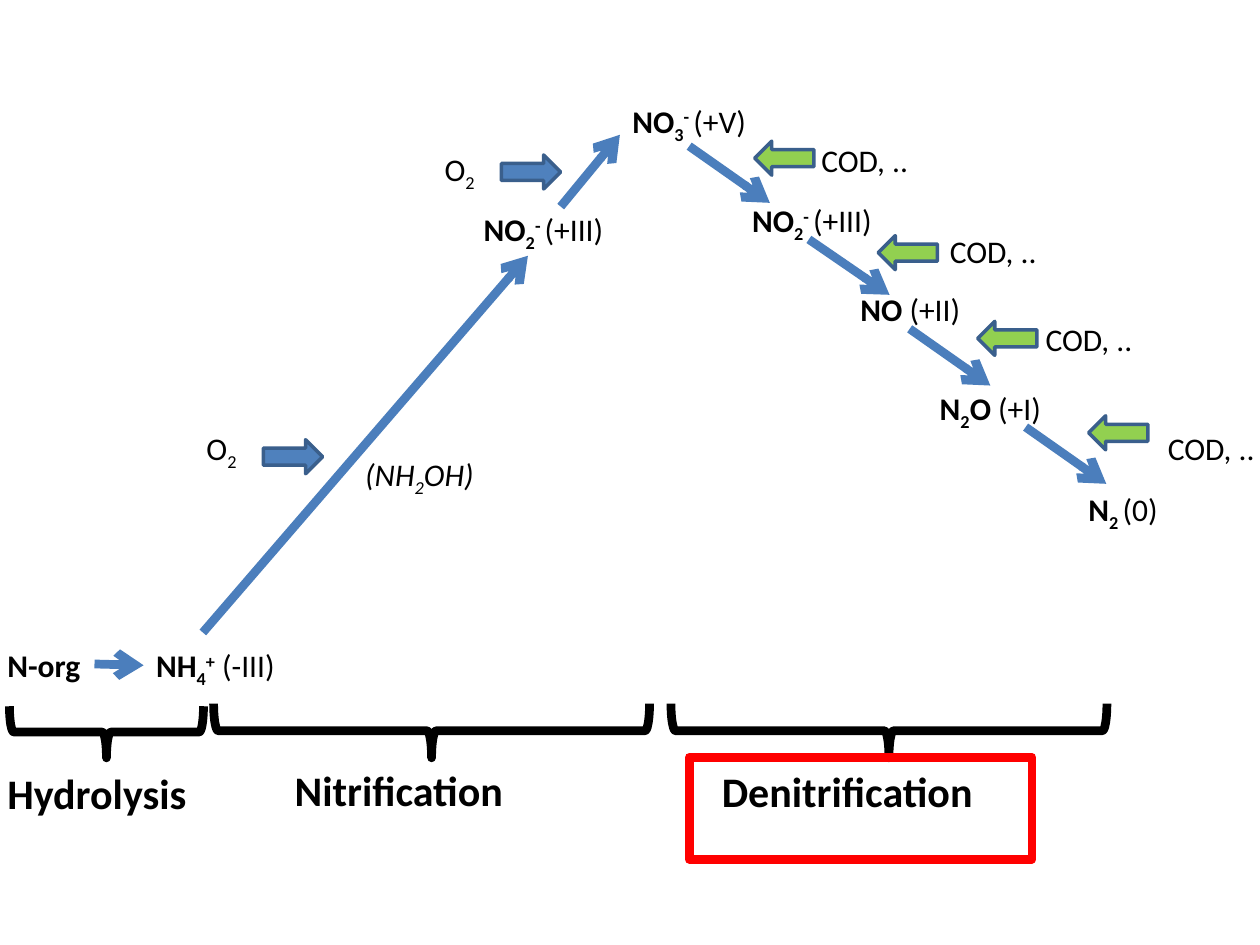
"""Draw the nitrogen cycle steps: hydrolysis, nitrification and denitrification."""
from typing import NamedTuple

from lxml import etree
from pptx import Presentation
from pptx.dml.color import RGBColor
from pptx.enum.shapes import MSO_CONNECTOR, MSO_SHAPE
from pptx.enum.text import MSO_AUTO_SIZE
from pptx.oxml.ns import qn
from pptx.shapes.autoshape import Shape
from pptx.slide import Slide
from pptx.util import Inches, Pt

STRAIGHT = MSO_CONNECTOR.STRAIGHT
BLOCK_ARROW = MSO_SHAPE.RIGHT_ARROW
BRACE = MSO_SHAPE.RIGHT_BRACE
RECTANGLE = MSO_SHAPE.RECTANGLE
FIT_SHAPE = MSO_AUTO_SIZE.SHAPE_TO_FIT_TEXT

BLACK = RGBColor(0x00, 0x00, 0x00)
BLUE = RGBColor(0x4F, 0x81, 0xBD)
ARROW_BLUE = RGBColor(0x4B, 0x7E, 0xBC)
OUTLINE_BLUE = RGBColor(0x3A, 0x5F, 0x8C)
GREEN = RGBColor(0x92, 0xD0, 0x50)
RED = RGBColor(0xFF, 0x00, 0x00)

FONT = "Calibri"
SUBSCRIPT = -25000
SUPERSCRIPT = 30000
HEAVY = 5


class Piece(NamedTuple):
    text: str
    baseline: int = 0
    bold: bool = True


class Label(NamedTuple):
    left: float
    top: float
    pieces: list[Piece]
    width: float = 1.18
    height: float = 0.4
    size: int = 18
    italic: bool = False


class Arrow(NamedTuple):
    start_x: float
    start_y: float
    end_x: float
    end_y: float


class Input(NamedTuple):
    arrow_left: float
    arrow_top: float
    text_left: float
    text_top: float


class Stage(NamedTuple):
    name: str
    text_left: float
    text_top: float
    text_width: float
    brace_left: float
    brace_top: float
    brace_width: float
    brace_height: float


def plain(text: str) -> Piece:
    return Piece(text, bold=False)


def sub(text: str, bold: bool = True) -> Piece:
    return Piece(text, SUBSCRIPT, bold)


def sup(text: str) -> Piece:
    return Piece(text, SUPERSCRIPT)


NITRITE = [Piece("NO"), sub("2"), sup("- "), plain("(+III)")]
OXYGEN = [plain("O"), sub("2", bold=False)]
COD = [plain("COD, ..")]

COMPOUNDS = [
    Label(-0.04, 5.08, [Piece("N-org")]),
    Label(1.14, 5.08, [Piece("NH"), sub("4"), sup("+"), plain(" (-III)")]),
    Label(2.8, 3.56, [plain("(NH"), sub("2", bold=False), plain("OH)")], italic=True),
    Label(3.74, 1.62, NITRITE),
    Label(4.92, 0.76, [Piece("NO"), sub("3"), sup("- "), plain("(+V)")], width=1.42),
    Label(5.87, 1.55, NITRITE),
    Label(6.73, 2.25, [Piece("NO "), plain("(+II)")]),
    Label(7.36, 3.04, [Piece("N"), sub("2"), Piece("O"), plain(" (+I)")]),
    Label(8.54, 3.84, [Piece("N"), sub("2 "), plain("(0)")]),
]
REACTIONS = [
    Arrow(0.75, 5.27, 1.14, 5.28),
    Arrow(1.61, 5.02, 4.19, 2.03),
    Arrow(4.45, 1.64, 4.92, 1.07),
    Arrow(5.47, 1.16, 6.11, 1.61),
    Arrow(6.42, 1.9, 7.06, 2.34),
    Arrow(7.22, 2.61, 7.86, 3.06),
    Arrow(8.14, 3.39, 8.78, 3.84),
]
OXYGEN_INPUTS = [Input(2.09, 3.49, 1.54, 3.36), Input(3.98, 1.23, 3.43, 1.14)]
COD_INPUTS = [
    Input(5.99, 1.12, 6.42, 1.07),
    Input(6.97, 1.87, 7.44, 1.79),
    Input(7.76, 2.55, 8.2, 2.49),
    Input(8.64, 3.3, 9.17, 3.36),
]
STAGES = [
    Stage("Hydrolysis", -0.04, 6.04, 2.84, 0.64, 5.04, 0.41, 1.54),
    Stage("Nitrification", 2.24, 6.02, 2.84, 3.21, 4.07, 0.43, 3.46),
    Stage("Denitrification", 5.63, 6.03, 4.09, 6.84, 4.07, 0.43, 3.46),
]


def add_label(slide: Slide, label: Label) -> None:
    box = slide.shapes.add_textbox(
        Inches(label.left), Inches(label.top), Inches(label.width), Inches(label.height))
    frame = box.text_frame
    frame.word_wrap = True
    frame.auto_size = FIT_SHAPE
    paragraph = frame.paragraphs[0]
    paragraph.font.name = FONT
    paragraph.font.size = Pt(label.size)
    paragraph.font.italic = label.italic
    paragraph.font.color.rgb = BLACK
    for piece in label.pieces:
        run = paragraph.add_run()
        run.text = piece.text
        run.font.bold = piece.bold
        if piece.baseline:
            run._r.get_or_add_rPr().set("baseline", str(piece.baseline))


def add_reaction(slide: Slide, arrow: Arrow) -> None:
    connector = slide.shapes.add_connector(STRAIGHT, *(Inches(value) for value in arrow))
    connector.line.color.rgb = ARROW_BLUE
    connector.line.width = Pt(HEAVY)
    etree.SubElement(connector.line._get_or_add_ln(), qn("a:tailEnd"), type="arrow")
    etree.SubElement(connector._element.spPr, qn("a:effectLst"))


def add_outline(slide: Slide, kind: int, left: float, top: float, width: float,
                height: float, color: RGBColor, weight: int = HEAVY) -> Shape:
    shape = slide.shapes.add_shape(
        kind, Inches(left), Inches(top), Inches(width), Inches(height))
    shape.shadow.inherit = False
    shape.fill.background()
    shape.line.color.rgb = color
    shape.line.width = Pt(weight)
    return shape


def add_input(slide: Slide, entry: Input, pieces: list[Piece], color: RGBColor,
              rotation: int) -> None:
    arrow = add_outline(slide, BLOCK_ARROW, entry.arrow_left, entry.arrow_top,
                        0.47, 0.27, OUTLINE_BLUE, 2)
    arrow.fill.solid()
    arrow.fill.fore_color.rgb = color
    arrow.rotation = rotation
    add_label(slide, Label(entry.text_left, entry.text_top, pieces))


def add_stage(slide: Slide, stage: Stage) -> None:
    brace = add_outline(slide, BRACE, stage.brace_left, stage.brace_top,
                        stage.brace_width, stage.brace_height, BLACK)
    brace.rotation = 90
    add_label(slide, Label(stage.text_left, stage.text_top, [Piece(stage.name)],
                           stage.text_width, 0.5, 24))


def main() -> None:
    presentation = Presentation()
    presentation.slide_width = Inches(10)
    presentation.slide_height = Inches(7.5)
    slide = presentation.slides.add_slide(presentation.slide_layouts[6])
    for compound in COMPOUNDS:
        add_label(slide, compound)
    for reaction in REACTIONS:
        add_reaction(slide, reaction)
    for entry in OXYGEN_INPUTS:
        add_input(slide, entry, OXYGEN, BLUE, 0)
    for entry in COD_INPUTS:
        add_input(slide, entry, COD, GREEN, 180)
    for stage in STAGES:
        add_stage(slide, stage)
    add_outline(slide, RECTANGLE, 5.47, 6.01, 2.72, 0.81, RED)
    presentation.save("out.pptx")


if __name__ == "__main__":
    main()
